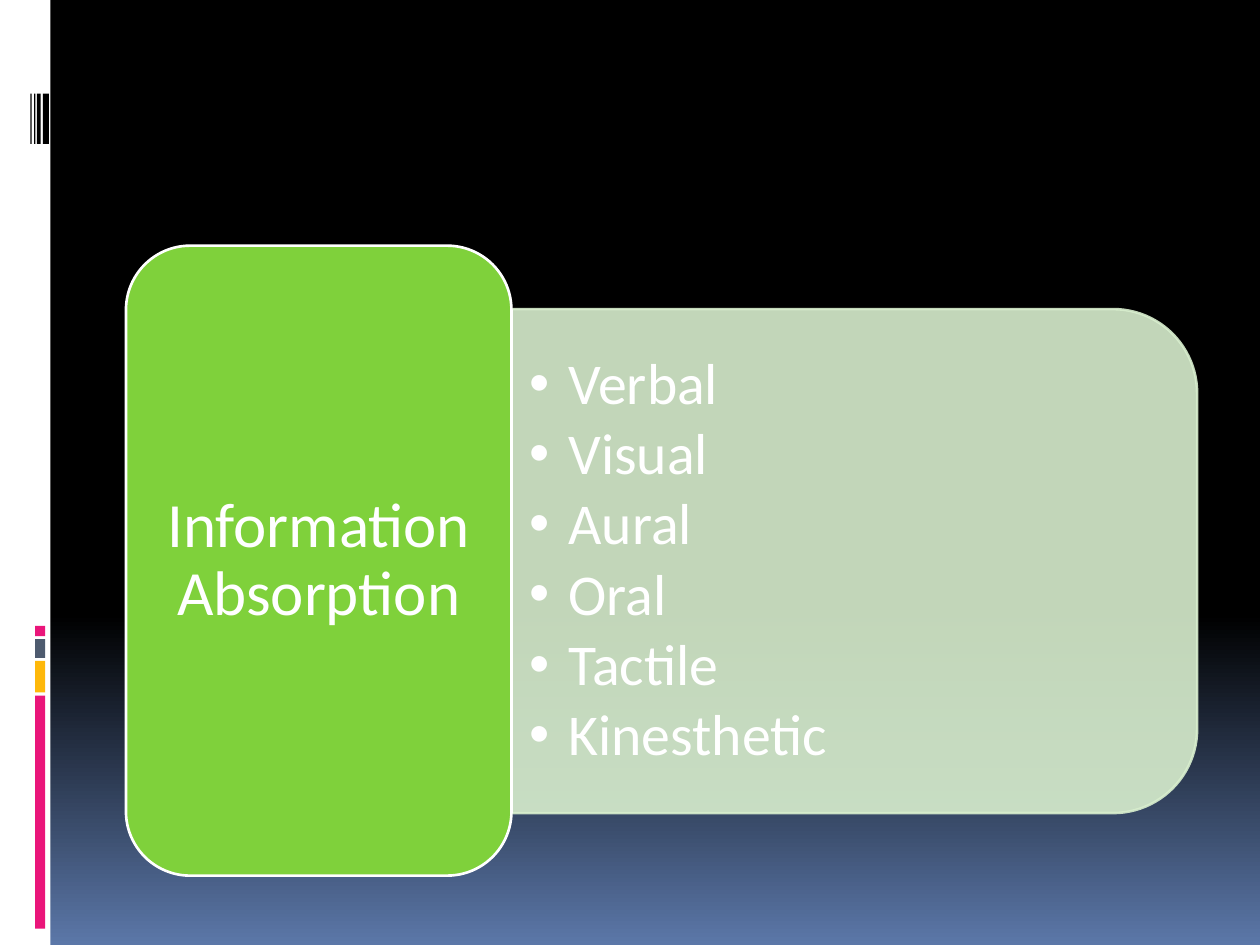
from copy import deepcopy

from pptx import Presentation
from pptx.dml.color import RGBColor
from pptx.enum import shapes, text
from pptx.oxml import ns, parse_xml
from pptx.util import Pt

COLORS = {
    "white": "FFFFFF", "black": "000000", "blue": "5B77A8",
    "pink": "EA157A", "amber": "FEB80A", "slate": "4E5B6F",
    "green": "7FD13B", "pale": "D8EECE",
}
SHAPE = shapes.MSO_SHAPE


def add_box(kind, x, y, w, h, color, line=None):
    sp = s.shapes.add_shape(kind, Pt(x), Pt(y), Pt(w), Pt(h))
    sp.shadow.inherit = False
    sp.fill.solid()
    sp.fill.fore_color.rgb = RGBColor.from_string(COLORS[color])
    if line:
        sp.line.color.rgb = RGBColor.from_string(COLORS[line])
        sp.line.width = Pt(1.5)
    else:
        sp.line.fill.background()
    return sp


def format_text(sp, lines, size, margin):
    tf = sp.text_frame
    tf.text = "\n".join(lines)
    tf.word_wrap = True
    tf.auto_size = text.MSO_AUTO_SIZE.NONE
    tf.vertical_anchor = text.MSO_ANCHOR.MIDDLE
    tf.margin_left = tf.margin_right = Pt(margin)
    tf.margin_top = tf.margin_bottom = Pt(5)
    for p in tf.paragraphs:
        p.line_spacing = 0.9
        p.space_before = Pt(0)
        p.font.name = "Calibri"
        p.font.size = Pt(size)
        p.font.color.rgb = RGBColor.from_string(COLORS["white"])
    return tf


prs = Presentation()
prs.slide_width, prs.slide_height = Pt(720), Pt(540)
s = prs.slides.add_slide(prs.slide_layouts[1])
title, body = s.placeholders
title._element.getparent().remove(title._element)

# Background: black, fading to blue at the bottom
fill = s.background.fill
fill.gradient()
fill.gradient_angle = 270
first_stop = s._element.xpath(".//a:gs")[0]
first_stop.addnext(deepcopy(first_stop))
stops = [(0, "black"), (0.65, "black"), (1, "blue")]
for stop, (position, color) in zip(fill.gradient_stops, stops):
    stop.position = position
    stop.color.rgb = RGBColor.from_string(COLORS[color])

# Side strip with coloured blocks and black bars
add_box(SHAPE.RECTANGLE, 0, 0, 28.8, 540, "white")
for y, h, color in [(397.5, 133.2, "pink"), (377.7, 18, "amber"),
                    (365.2, 10.8, "slate"), (357.7, 5.8, "pink")]:
    add_box(SHAPE.RECTANGLE, 20, y, 5.8, h, color)
for x, w in [(24.5, 3.5), (21.1, 2.2), (19.5, 0.7), (17.4, 0.7)]:
    add_box(SHAPE.RECTANGLE, x, 53.5, w, 28.8, "black")

# Pale panel, turned so that its round corners face right
panel = add_box(SHAPE.ROUND_2_SAME_RECTANGLE, 344.2, 124.8, 288, 391.7, "pale", "pale")
panel.rotation = 90
for clr in panel._element.spPr.xpath(".//a:srgbClr"):
    clr.append(parse_xml(f'<a:alpha {ns.nsdecls("a")} val="90000"/>'))

# List on the panel
s.shapes._spTree.append(body._element)
body.left, body.top, body.width, body.height = Pt(292.3), Pt(190.8), Pt(377.3), Pt(260)
kinds = ["Verbal", "Visual", "Aural", "Oral", "Tactile", "Kinesthetic"]
for p in format_text(body, kinds, 33, 10).paragraphs:
    p.space_after = Pt(4.5)
    pPr = p._p.get_or_add_pPr()
    pPr.set("marL", str(Pt(22.5)))
    pPr.set("indent", str(-Pt(22.5)))

# Green heading card
card = add_box(SHAPE.ROUNDED_RECTANGLE, 72, 140.4, 220.3, 360, "green", "white")
tf = format_text(card, ["Information Absorption"], 36, 10.8)
tf.paragraphs[0].alignment = text.PP_ALIGN.CENTER

prs.save("out.pptx")
